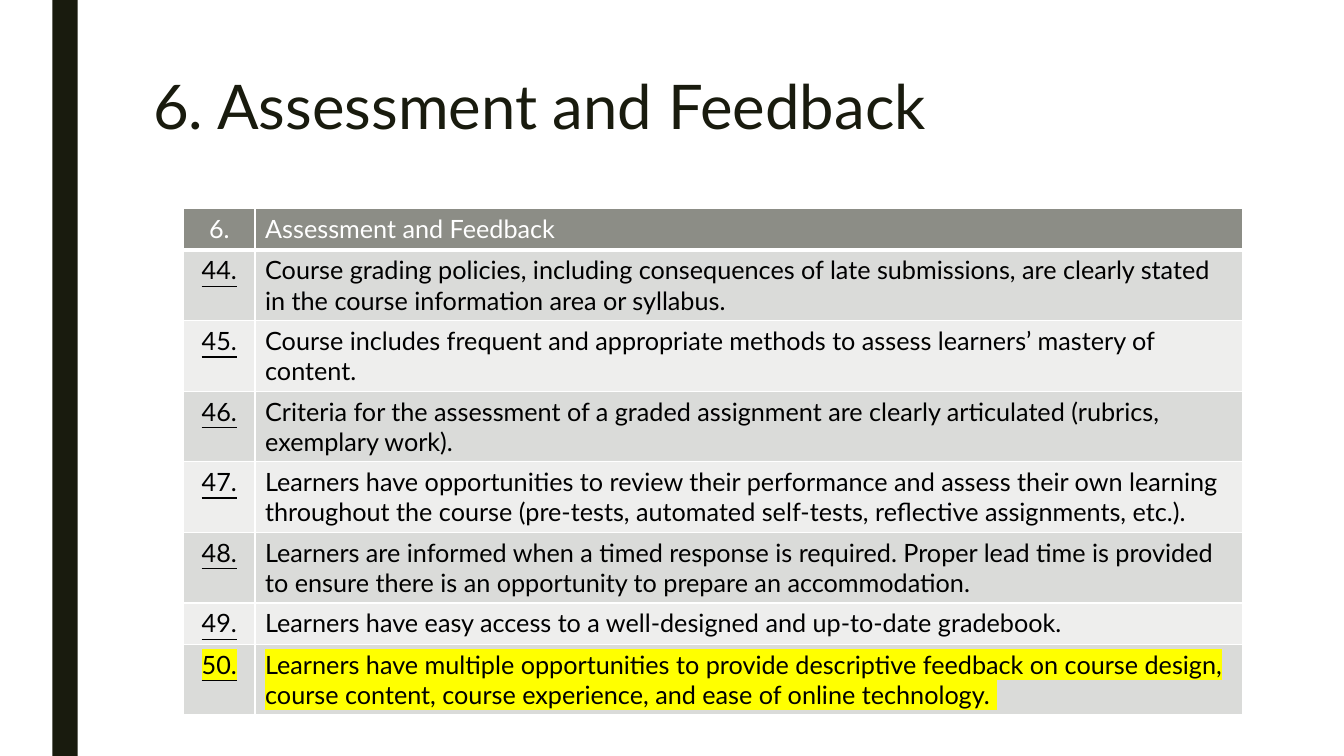
import pptx
import pptx.dml.color
import pptx.enum.shapes
import pptx.enum.text
import pptx.oxml
import pptx.oxml.ns
import pptx.util

COLORS = {
    "dark": "191B0E", "header": "8C8D86", "odd": "DADBD9", "even": "EEEEED",
    "white": "FFFFFF", "black": "000000", "marker": "FFFF00",
}
FONT = "Lato"
HEADER = ("6.", "Assessment and Feedback")
FIRST_NUMBER = 44
CRITERIA = [
    "Course grading policies, including consequences of late submissions, are clearly stated "
    "in the course information area or syllabus.",
    "Course includes frequent and appropriate methods to assess learners’ mastery of content.",
    "Criteria for the assessment of a graded assignment are clearly articulated (rubrics, "
    "exemplary work).",
    "Learners have opportunities to review their performance and assess their own learning "
    "throughout the course (pre-tests, automated self-tests, reflective assignments, etc.).",
    "Learners are informed when a timed response is required. Proper lead time is provided "
    "to ensure there is an opportunity to prepare an accommodation.",
    "Learners have easy access to a well-designed and up-to-date gradebook.",
    "Learners have multiple opportunities to provide descriptive feedback on course design, "
    "course content, course experience, and ease of online technology. ",
]


def rgb(name):
    return pptx.dml.color.RGBColor.from_string(COLORS[name])


def add_run(p, text, size, color):
    r = p.add_run()
    r.text = text
    r.font.size = pptx.util.Pt(size)
    r.font.name = FONT
    r.font.color.rgb = rgb(color)
    return r


prs = pptx.Presentation()
prs.slide_width = pptx.util.Inches(13.33)
prs.slide_height = pptx.util.Inches(7.5)
s = prs.slides.add_slide(prs.slide_layouts[6])
unit = prs.slide_height // 75  # the slide is a grid of 75 rows

# Side bar
sp = s.shapes.add_shape(pptx.enum.shapes.MSO_SHAPE.RECTANGLE,
                        int(5.2 * unit), 0, int(2.5 * unit), prs.slide_height)
sp.shadow.inherit = False
sp.fill.solid()
sp.fill.fore_color.rgb = rgb("dark")
sp.line.fill.background()

# Title
title = s.shapes.add_textbox(int(14.2 * unit), int(7.1 * unit), 105 * unit, int(16.2 * unit))
tf = title.text_frame
tf.word_wrap = True
p = tf.paragraphs[0]
p.line_spacing = 0.89
add_run(p, HEADER[0] + " " + HEADER[1], 44, "dark")

# Criteria table
rows = [HEADER] + [(f"{n}.", text) for n, text in enumerate(CRITERIA, FIRST_NUMBER)]
row_height = int(4.1 * unit)
table = s.shapes.add_table(len(rows), 2, int(18.2 * unit), int(20.7 * unit),
                           105 * unit, row_height * len(rows)).table
for column, width in zip(table.columns, (7.1, 97.9)):
    column.width = int(width * unit)

for i, row in enumerate(rows):
    table.rows[i].height = row_height
    is_header = i == 0
    is_marked = i == len(rows) - 1
    fill = "header" if is_header else ("even", "odd")[i % 2]
    for j, text in enumerate(row):
        cell = table.cell(i, j)
        tc_pr = cell._tc.get_or_add_tcPr()
        for side in "LRTB":
            points = 3 if is_header and side == "B" else 1
            tc_pr.append(pptx.oxml.parse_xml(
                f'<a:ln{side} {pptx.oxml.ns.nsdecls("a")} w="{pptx.util.Pt(points)}">'
                f'<a:solidFill><a:srgbClr val="{COLORS["white"]}"/></a:solidFill></a:ln{side}>'))
        cell.fill.solid()
        cell.fill.fore_color.rgb = rgb(fill)
        p = cell.text_frame.paragraphs[0]
        r = add_run(p, text, 18, "white" if is_header else "black")
        r.font.bold = False
        if j == 0:
            p.alignment = pptx.enum.text.PP_ALIGN.CENTER
            r.font.underline = not is_header
        if is_marked:
            r.font._rPr.find(pptx.oxml.ns.qn("a:solidFill")).addnext(pptx.oxml.parse_xml(
                f'<a:highlight {pptx.oxml.ns.nsdecls("a")}>'
                f'<a:srgbClr val="{COLORS["marker"]}"/></a:highlight>'))

prs.save("out.pptx")
